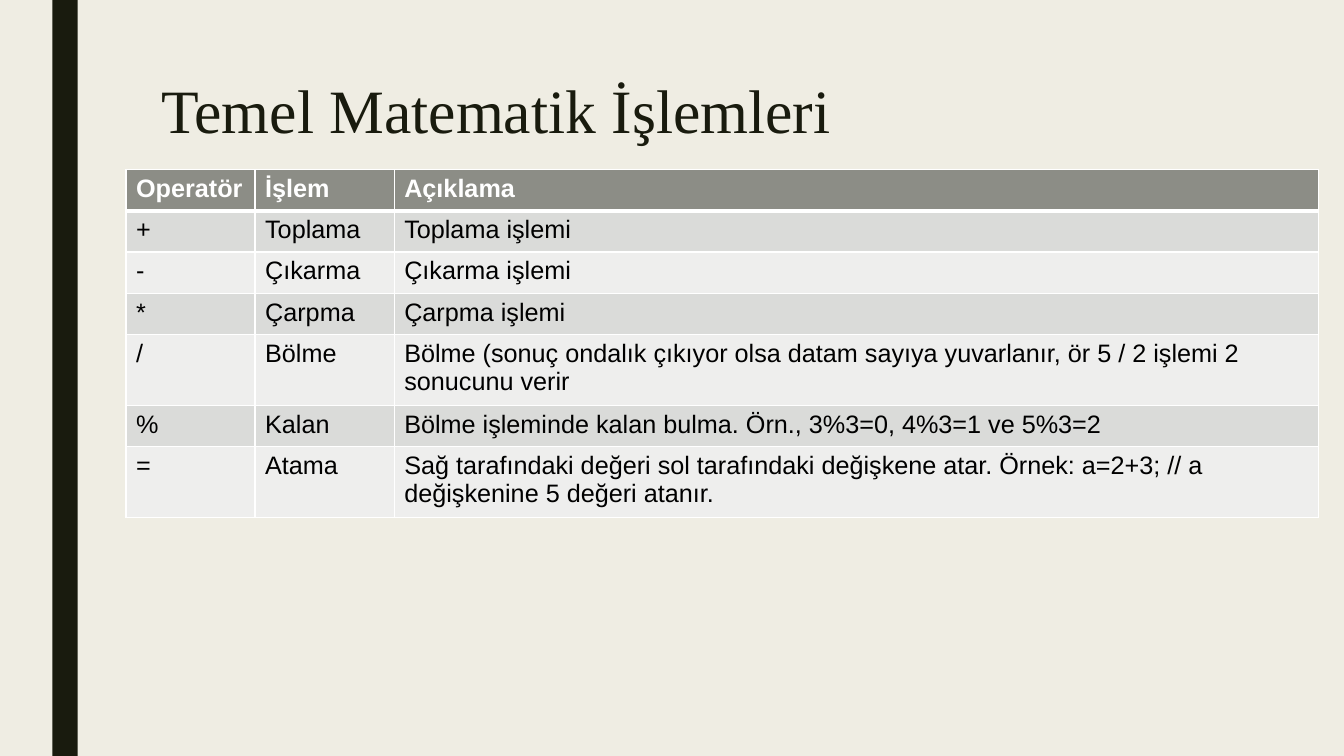
from dataclasses import dataclass

from lxml.etree import SubElement
from pptx import Presentation
from pptx.dml.color import RGBColor
from pptx.enum.shapes import MSO_SHAPE
from pptx.enum.text import MSO_ANCHOR
from pptx.oxml.ns import qn
from pptx.util import Inches, Pt


@dataclass(frozen=True)
class Theme:
    """Colours, fonts and type sizes of the slide."""
    background: str = "EFEDE3"
    ink: str = "191B0E"
    header: str = "8C8D86"
    bands: tuple = ("DADBD9", "EEEEED")
    white: str = "FFFFFF"
    black: str = "000000"
    title_font: str = "Times New Roman"
    body_font: str = "Arial"
    title_size: int = 44
    body_size: int = 18
    thin: int = 1
    thick: int = 3


THEME = Theme()
COLUMN_WIDTHS = (1.28, 1.38, 9.17)
ROW_HEIGHT = 0.41
OPERATORS = (
    ("Operatör", "İşlem", "Açıklama"),
    ("+", "Toplama", "Toplama işlemi"),
    ("-", "Çıkarma", "Çıkarma işlemi"),
    ("*", "Çarpma", "Çarpma işlemi"),
    ("/", "Bölme", "Bölme (sonuç ondalık çıkıyor olsa datam sayıya yuvarlanır, "
                   "ör 5 / 2 işlemi 2 sonucunu verir"),
    ("%", "Kalan", "Bölme işleminde kalan bulma. Örn., 3%3=0, 4%3=1 ve 5%3=2"),
    ("=", "Atama", "Sağ tarafındaki değeri sol tarafındaki değişkene atar. "
                   "Örnek: a=2+3; // a değişkenine 5 değeri atanır."),
)


def paint(fill, color):
    """Give a fill one solid colour."""
    fill.solid()
    fill.fore_color.rgb = RGBColor.from_string(color)


def style_font(font, name, size, color, bold=False):
    """Set the face, size, colour and weight of a font."""
    font.name = name
    font.size = Pt(size)
    font.bold = bold
    font.color.rgb = RGBColor.from_string(color)


def add_side_bar(page):
    """Draw the dark vertical bar on the left."""
    bar = page.shapes.add_shape(
        MSO_SHAPE.RECTANGLE, Inches(0.52), 0, Inches(0.25), Inches(7.5))
    bar.shadow.inherit = False
    paint(bar.fill, THEME.ink)
    bar.line.fill.background()


def add_title(page, text):
    """Write the slide title."""
    box = page.shapes.add_textbox(
        Inches(1.5), Inches(0.75), Inches(10.5), Inches(1.62))
    frame = box.text_frame
    frame.word_wrap = True
    frame.vertical_anchor = MSO_ANCHOR.TOP
    para = frame.paragraphs[0]
    para.text = text
    para.line_spacing = 0.89
    style_font(para.font, THEME.title_font, THEME.title_size, THEME.ink)


def add_borders(cell, top, bottom):
    """Draw white borders around a cell, with the given top and bottom widths."""
    properties = cell._tc.get_or_add_tcPr()
    widths = {"L": THEME.thin, "R": THEME.thin, "T": top, "B": bottom}
    for side, width in widths.items():
        line = SubElement(properties, qn(f"a:ln{side}"), w=str(Pt(width)))
        fill = SubElement(line, qn("a:solidFill"))
        SubElement(fill, qn("a:srgbClr"), val=THEME.white)


def fill_cell(cell, text, row):
    """Write and style one table cell according to its row."""
    is_header = row == 0
    add_borders(cell,
                top=THEME.thick if row == 1 else THEME.thin,
                bottom=THEME.thick if is_header else THEME.thin)
    paint(cell.fill, THEME.header if is_header else THEME.bands[(row - 1) % 2])
    para = cell.text_frame.paragraphs[0]
    para.text = text
    style_font(para.font, THEME.body_font, THEME.body_size,
               THEME.white if is_header else THEME.black, is_header)


def add_operator_table(page, rows):
    """Add the table of operators."""
    table = page.shapes.add_table(
        len(rows), len(COLUMN_WIDTHS), Inches(1.25), Inches(1.68),
        Inches(sum(COLUMN_WIDTHS)), Inches(ROW_HEIGHT * len(rows))).table
    for column, width in zip(table.columns, COLUMN_WIDTHS):
        column.width = Inches(width)
    for row, texts in enumerate(rows):
        table.rows[row].height = Inches(ROW_HEIGHT)
        for column, text in enumerate(texts):
            fill_cell(table.cell(row, column), text, row)


def main():
    """Build and save the slide."""
    deck = Presentation()
    deck.slide_width, deck.slide_height = Inches(13.33), Inches(7.5)
    page = deck.slides.add_slide(deck.slide_layouts[6])
    paint(page.background.fill, THEME.background)
    add_side_bar(page)
    add_title(page, "Temel Matematik İşlemleri")
    add_operator_table(page, OPERATORS)
    deck.save("out.pptx")


if __name__ == "__main__":
    main()
